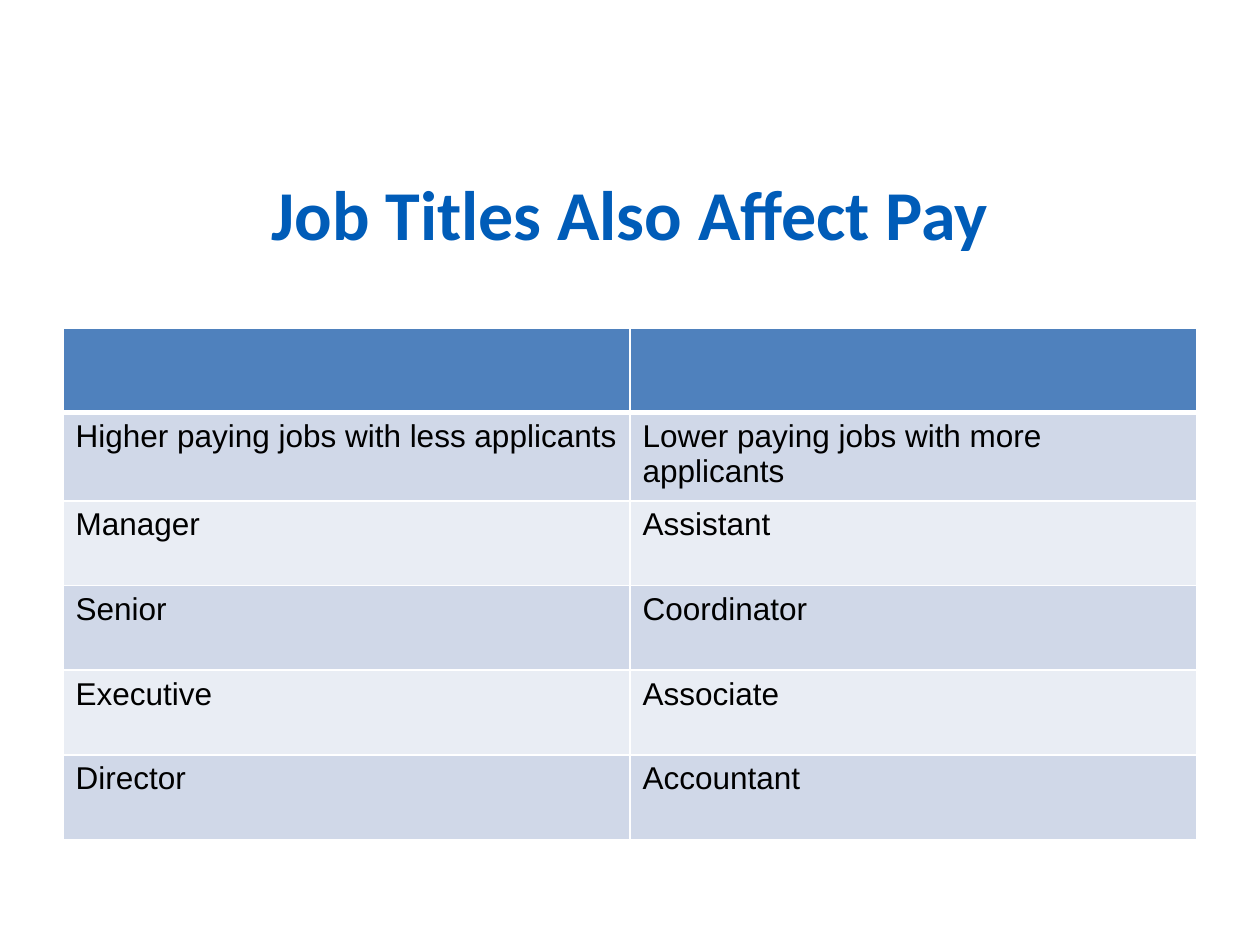
from lxml.etree import SubElement
from pptx import Presentation
from pptx.dml.color import RGBColor
from pptx.enum.text import MSO_ANCHOR, PP_ALIGN
from pptx.oxml.ns import qn
from pptx.util import Pt

EMU_PER_PX = 914400 / 126
TITLE_BLUE = RGBColor(0x00, 0x5C, 0xB8)
HEADER_BLUE = RGBColor(0x4F, 0x81, 0xBD)
BAND_DARK = RGBColor(0xD0, 0xD8, 0xE8)
BAND_LIGHT = RGBColor(0xE9, 0xED, 0xF4)
BLACK = RGBColor(0x00, 0x00, 0x00)
WHITE = RGBColor(0xFF, 0xFF, 0xFF)

JOB_ROWS = [
    ("", ""),
    ("Higher paying jobs with less applicants", "Lower paying jobs with more applicants"),
    ("Manager", "Assistant"),
    ("Senior", "Coordinator"),
    ("Executive", "Associate"),
    ("Director", "Accountant"),
]


def px(length):
    """Turn px into EMU."""
    return round(length * EMU_PER_PX)


def add_run(paragraph, text, font_name, size, color, bold=False):
    """Add one formatted run to a paragraph."""
    run = paragraph.add_run()
    run.text = text
    run.font.name = font_name
    run.font.size = Pt(size)
    run.font.bold = bold
    run.font.color.rgb = color


def set_borders(cell, top, bottom):
    """Draw white cell borders, with the top and bottom widths in points."""
    properties = cell._tc.get_or_add_tcPr()
    for side, width in (("L", 1), ("R", 1), ("T", top), ("B", bottom)):
        line = SubElement(properties, qn(f"a:ln{side}"), w=str(Pt(width)))
        fill = SubElement(line, qn("a:solidFill"))
        SubElement(fill, qn("a:srgbClr"), val=str(WHITE))


def add_title(slide, left, top, width, height):
    """Place the centred slide title in the given box."""
    shape = slide.shapes.add_textbox(px(left), px(top), px(width), px(height))
    frame = shape.text_frame
    frame.word_wrap = True
    frame.vertical_anchor = MSO_ANCHOR.MIDDLE
    paragraph = frame.paragraphs[0]
    paragraph.alignment = PP_ALIGN.CENTER
    paragraph.line_spacing = Pt(57)
    add_run(paragraph, "Job Titles Also Affect Pay", "Calibri", 40, TITLE_BLUE, True)


def add_job_table(slide, left, top, width, height):
    """Place the banded job title table in the given box."""
    table = slide.shapes.add_table(
        len(JOB_ROWS), len(JOB_ROWS[0]), px(left), px(top), px(width), px(height)
    ).table
    for row, texts in enumerate(JOB_ROWS):
        band = BAND_DARK if row % 2 else BAND_LIGHT
        for column, text in enumerate(texts):
            cell = table.cell(row, column)
            set_borders(cell, 3 if row == 1 else 1, 3 if row == 0 else 1)
            cell.fill.solid()
            cell.fill.fore_color.rgb = band if row else HEADER_BLUE
            if text:
                add_run(cell.text_frame.paragraphs[0], text, "Arial", 18, BLACK)


def main():
    """Build and save the presentation."""
    presentation = Presentation()
    presentation.slide_width = px(1260)
    presentation.slide_height = px(945)
    slide = presentation.slides.add_slide(presentation.slide_layouts[6])
    add_title(slide, 63, 126, 1134, 158)
    add_job_table(slide, 63, 328, 1134, 508)
    presentation.save("out.pptx")


if __name__ == "__main__":
    main()
